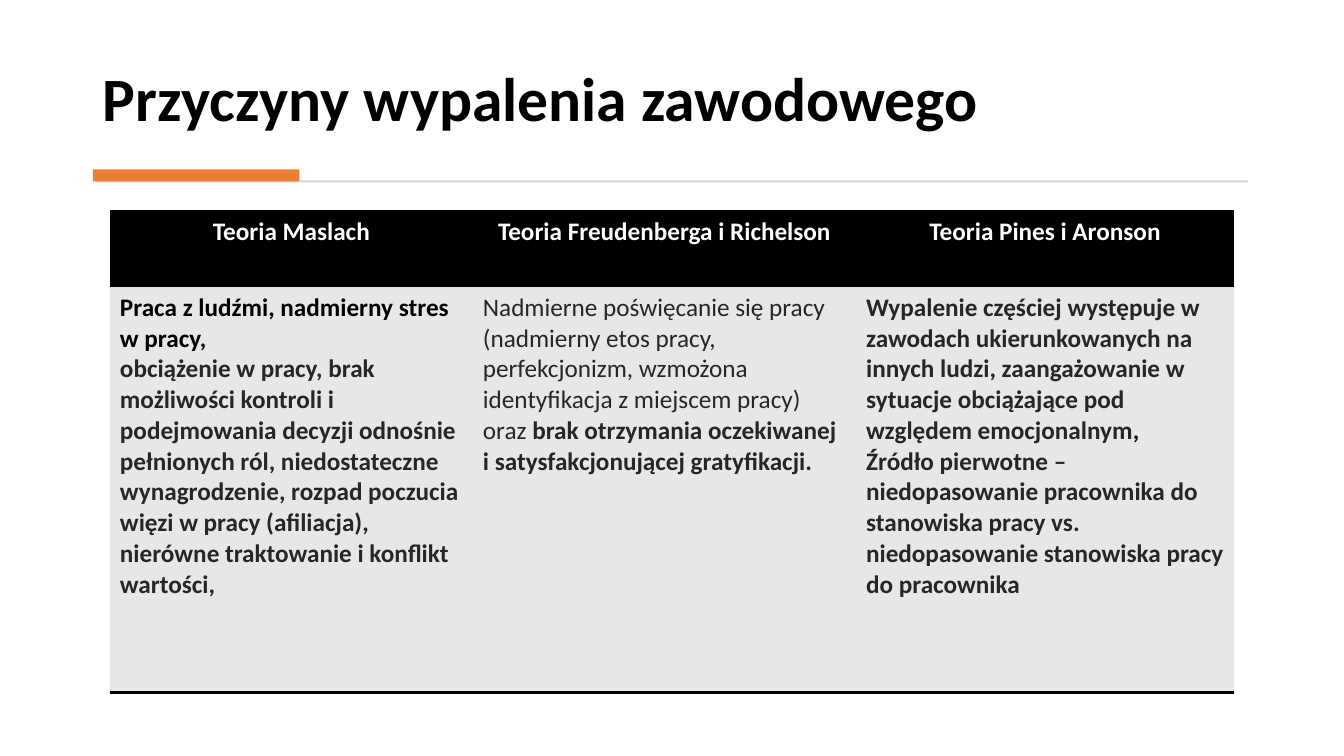
"""Builds a slide comparing three theories of the causes of burnout."""
from lxml.etree import SubElement
from pptx import Presentation
from pptx.dml.color import RGBColor
from pptx.enum.shapes import MSO_SHAPE as Shape
from pptx.enum.text import MSO_ANCHOR as Anchor, PP_ALIGN as Align
from pptx.oxml.ns import qn
from pptx.util import Inches, Pt

BLACK = RGBColor(0x00, 0x00, 0x00)
WHITE = RGBColor(0xFF, 0xFF, 0xFF)
DARK = RGBColor(0x26, 0x26, 0x26)
PALE = RGBColor(0xE7, 0xE7, 0xE7)
RULE = RGBColor(0xD5, 0xD5, 0xD5)
ORANGE = RGBColor(0xED, 0x7D, 0x31)
NO_GRID_STYLE = "{2D5ABB26-0587-4C30-8999-92F81FD0307C}"


def add_text(para, text, size=18, color=DARK, bold=True):
    span = para.add_run()
    span.text = text
    span.font.name = "Calibri"
    span.font.size = Pt(size)
    span.font.bold = bold
    span.font.color.rgb = color


def add_border(cell, side):
    properties = cell._tc.get_or_add_tcPr()
    line = properties.makeelement(qn(f"a:{side}"), {"w": str(Pt(2))})
    properties.insert(0, line)
    fill = SubElement(line, qn("a:solidFill"))
    SubElement(fill, qn("a:srgbClr"), val=str(BLACK))


deck = Presentation()
deck.slide_width = Inches(13.33)
deck.slide_height = Inches(7.5)
page = deck.slides.add_slide(deck.slide_layouts[6])

title = page.shapes.add_textbox(Inches(0.92), Inches(0.28), Inches(11.49), Inches(1.11)).text_frame
title.word_wrap = True
title.vertical_anchor = Anchor.BOTTOM
title.paragraphs[0].line_spacing = 0.9
add_text(title.paragraphs[0], "Przyczyny wypalenia zawodowego", size=44, color=BLACK)

for left, top, width, height, color in [
    (0.95, 1.79, 11.43, 0.02, RULE),
    (0.92, 1.68, 2.05, 0.12, ORANGE),
]:
    bar = page.shapes.add_shape(Shape.RECTANGLE, Inches(left), Inches(top), Inches(width), Inches(height))
    bar.shadow.inherit = False
    bar.fill.solid()
    bar.fill.fore_color.rgb = color
    bar.line.fill.background()

theories = [
    ("Teoria Maslach", 3.6, [
        [("Praca z ludźmi, nadmierny stres w pracy,", BLACK, True)],
        [("obciążenie w pracy, brak możliwości kontroli i podejmowania decyzji odnośnie "
          "pełnionych ról, niedostateczne wynagrodzenie, rozpad poczucia więzi w pracy "
          "(afiliacja), nierówne traktowanie i konflikt wartości,", DARK, True)],
    ]),
    ("Teoria Freudenberga i Richelson", 3.8, [
        [("Nadmierne poświęcanie się pracy (nadmierny etos pracy, perfekcjonizm, wzmożona "
          "identyfikacja z miejscem pracy) oraz ", DARK, False),
         ("brak otrzymania oczekiwanej i satysfakcjonującej gratyfikacji.", DARK, True)],
    ]),
    ("Teoria Pines i Aronson", 3.75, [
        [("Wypalenie częściej występuje w zawodach ukierunkowanych na innych ludzi, "
          "zaangażowanie w sytuacje obciążające pod względem emocjonalnym", DARK, True),
         (",", BLACK, True)],
        [("Źródło pierwotne – niedopasowanie pracownika do stanowiska pracy vs. "
          "niedopasowanie stanowiska pracy do pracownika", DARK, True)],
    ]),
]

frame = page.shapes.add_table(2, len(theories), Inches(1.09), Inches(2.1), Inches(11.15), Inches(4.77))
table = frame.table
table.horz_banding = False
table._tbl.tblPr.find(qn("a:tableStyleId")).text = NO_GRID_STYLE
table.rows[0].height = Inches(0.75)
table.rows[1].height = Inches(4.02)

for column, (name, width, paragraphs) in enumerate(theories):
    table.columns[column].width = Inches(width)
    header, body = table.cell(0, column), table.cell(1, column)
    for cell, color, side in [(header, BLACK, "lnT"), (body, PALE, "lnB")]:
        cell.fill.solid()
        cell.fill.fore_color.rgb = color
        add_border(cell, side)
    heading = header.text_frame.paragraphs[0]
    heading.alignment = Align.CENTER
    add_text(heading, name, color=WHITE)
    for index, spans in enumerate(paragraphs):
        para = body.text_frame.add_paragraph() if index else body.text_frame.paragraphs[0]
        for text, color, bold in spans:
            add_text(para, text, color=color, bold=bold)

deck.save("out.pptx")
